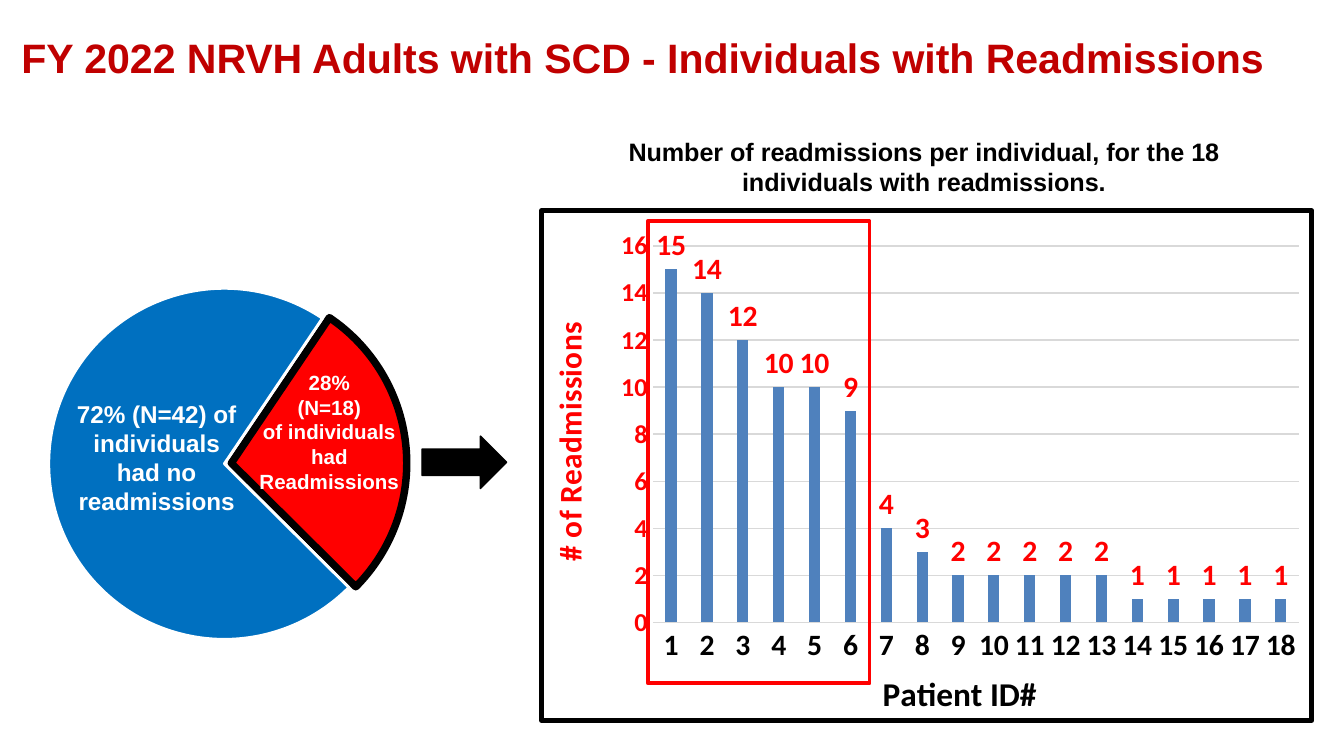
"""Build a slide on how readmissions are spread across adult SCD patients."""
from lxml import etree
from pptx import Presentation
from pptx.chart.data import CategoryChartData
from pptx.dml.color import RGBColor
from pptx.enum.chart import XL_CHART_TYPE, XL_LABEL_POSITION, XL_TICK_MARK
from pptx.enum.shapes import MSO_SHAPE
from pptx.enum.text import MSO_ANCHOR, PP_ALIGN
from pptx.oxml import parse_xml
from pptx.oxml.ns import qn
from pptx.util import Inches, Pt

COLUMN, PIE = XL_CHART_TYPE.COLUMN_CLUSTERED, XL_CHART_TYPE.PIE
OUTSIDE, NO_TICK = XL_LABEL_POSITION.OUTSIDE_END, XL_TICK_MARK.NONE
RECTANGLE, RIGHT_ARROW = MSO_SHAPE.RECTANGLE, MSO_SHAPE.RIGHT_ARROW
LEFT, CENTER, MIDDLE = PP_ALIGN.LEFT, PP_ALIGN.CENTER, MSO_ANCHOR.MIDDLE
BLACK, WHITE = RGBColor(0, 0, 0), RGBColor(255, 255, 255)
RED, DARK_RED = RGBColor(255, 0, 0), RGBColor(0xC0, 0, 0)
BLUE, STEEL = RGBColor(0, 0x70, 0xC0), RGBColor(0x4F, 0x81, 0xBD)
GRAY = RGBColor(0xD9, 0xD9, 0xD9)
CHART_NS = "http://schemas.openxmlformats.org/drawingml/2006/chart"
DRAWING_NS = "http://schemas.openxmlformats.org/drawingml/2006/main"


def cells(*counts):
    """Turn counts of grid cells, each a tenth of an inch, into lengths."""
    return [Inches(count / 10) for count in counts]


def write(frame, text, size, color, font="Arial", align=CENTER):
    """Fill a text frame with bold text, one paragraph per line."""
    for number, line in enumerate(text.split("\n")):
        paragraph = frame.add_paragraph() if number else frame.paragraphs[0]
        paragraph.alignment = align
        run = paragraph.add_run()
        run.text = line
        run.font.name, run.font.size, run.font.bold = font, Pt(size), True
        run.font.color.rgb = color


deck = Presentation()
deck.slide_width, deck.slide_height = cells(100, 56.25)
slide = deck.slides.add_slide(deck.slide_layouts[5])
shapes = slide.shapes

heading = shapes.title
heading.left, heading.top, heading.width, heading.height = cells(0.6, 1, 95.3, 6.5)
heading.text_frame.vertical_anchor = MIDDLE
write(heading.text_frame, "FY 2022 NRVH Adults with SCD - Individuals with Readmissions",
      size=22, color=DARK_RED, align=LEFT)

readmissions = CategoryChartData()
readmissions.categories = [str(patient) for patient in range(1, 19)]
readmissions.add_series("Series 1", [15, 14, 12, 10, 10, 9, 4, 3] + [2] * 5 + [1] * 5)
per_patient = shapes.add_chart(COLUMN, *cells(40.1, 15.5, 57.7, 38.4), readmissions).chart

share = CategoryChartData()
share.categories = ["1", "2"]
share.add_series("Series 1", [28, 72])
split = shapes.add_chart(PIE, *cells(1.5, 19.7, 36.7, 28.4), share).chart

for chart in (per_patient, split):
    chart.has_legend = chart.has_title = False
    chart.font.name, chart.font.size = "Calibri", Pt(10)
    chart.font.color.rgb = BLACK

bars = per_patient.plots[0]
bars.gap_width, bars.overlap, bars.vary_by_categories = 219, -27, False
bars.series[0].format.fill.solid()
bars.series[0].format.fill.fore_color.rgb = STEEL
counts = bars.series[0].data_labels
counts.show_value, counts.position = True, OUTSIDE

patients, number = per_patient.category_axis, per_patient.value_axis
number.minimum_scale, number.maximum_scale, number.major_unit = 0, 16, 2
number.format.line.fill.background()
for axis in (patients, number):
    axis.major_tick_mark = axis.minor_tick_mark = NO_TICK
for line in (patients.format.line, number.major_gridlines.format.line):
    line.color.rgb, line.width = GRAY, Pt(0.75)
for font, size, color in ((patients.tick_labels.font, 16, BLACK),
                          (number.tick_labels.font, 14, RED),
                          (counts.font, 16, RED)):
    font.name, font.size, font.bold = "Calibri", Pt(size), True
    font.color.rgb = color
write(patients.axis_title.text_frame, "Patient ID#", size=18, color=BLACK, font="Calibri")
write(number.axis_title.text_frame, "# of Readmissions", size=17, color=RED, font="Calibri")
number.axis_title._element.find(".//" + qn("a:bodyPr")).set("rot", "-5400000")

border = parse_xml(
    f'<c:spPr xmlns:c="{CHART_NS}" xmlns:a="{DRAWING_NS}"><a:noFill/>'
    f'<a:ln w="{Pt(2.75)}"><a:solidFill><a:srgbClr val="{BLACK}"/></a:solidFill>'
    '<a:round/></a:ln></c:spPr>')
per_patient.element.find(qn("c:chart")).addnext(border)

pie = split.plots[0]
pie.vary_by_categories = True
for index, fill, edge, width in ((0, RED, BLACK, 4), (1, BLUE, WHITE, 1.5)):
    wedge = pie.series[0].points[index].format
    wedge.fill.solid()
    wedge.fill.fore_color.rgb = fill
    wedge.line.color.rgb, wedge.line.width = edge, Pt(width)
explosion = etree.Element(qn("c:explosion"), val="2")
pie.series[0]._element.find(qn("c:dPt")).addprevious(explosion)
pie_xml = split.element.find(".//" + qn("c:pieChart"))
for old_angle in pie_xml.findall(qn("c:firstSliceAng")):
    pie_xml.remove(old_angle)
etree.SubElement(pie_xml, qn("c:firstSliceAng"), val="34")

for part, position, percents in (
        (per_patient.element.find(".//" + qn("c:plotArea")), 0,
         {"x": 14.5, "y": 6.9, "w": 83.8, "h": 73.9}),
        (split.element.find(".//" + qn("c:plotArea")), 0,
         {"x": 5.8, "y": 4.3, "w": 72.6, "h": 95.6}),
        (patients.axis_title._element, 1, {"x": 43.5, "y": 89}),
        (number.axis_title._element, 1, {"x": 0, "y": 21})):
    for old_layout in part.findall(qn("c:layout")):
        part.remove(old_layout)
    layout = etree.Element(qn("c:layout"))
    manual = etree.SubElement(layout, qn("c:manualLayout"))
    if "w" in percents:
        etree.SubElement(manual, qn("c:layoutTarget"), val="inner")
    for side in ("x", "y"):
        etree.SubElement(manual, qn(f"c:{side}Mode"), val="edge")
    for side, percent in percents.items():
        etree.SubElement(manual, qn(f"c:{side}"), val=f"{percent / 100:.3f}")
    part.insert(position, layout)

top_six = shapes.add_shape(RECTANGLE, *cells(48.2, 16.45, 16.5, 34.4))
top_six.fill.background()
arrow = shapes.add_shape(RIGHT_ARROW, *cells(31.4, 32.45, 6.3, 3.9))
arrow.fill.solid()
arrow.fill.fore_color.rgb = BLACK
for outline, color, width in ((top_six, RED, 2), (arrow, BLACK, 0.75)):
    outline.shadow.inherit = False
    outline.line.color.rgb, outline.line.width = color, Pt(width)

for area, text, size, color in (
        ((16.55, 27.05, 15.9, 10.7), "28%\n(N=18)\nof individuals\nhad\nReadmissions", 11, WHITE),
        ((4.5, 29.2, 14.3, 10.1), "72% (N=42) of individuals had no readmissions", 13, WHITE),
        ((42.35, 9.65, 52.8, 5.6), "Number of readmissions per individual, for the 18 "
         "individuals with readmissions.", 13.5, BLACK)):
    caption = shapes.add_textbox(*cells(*area)).text_frame
    caption.word_wrap = True
    write(caption, text, size=size, color=color)

deck.save("out.pptx")
